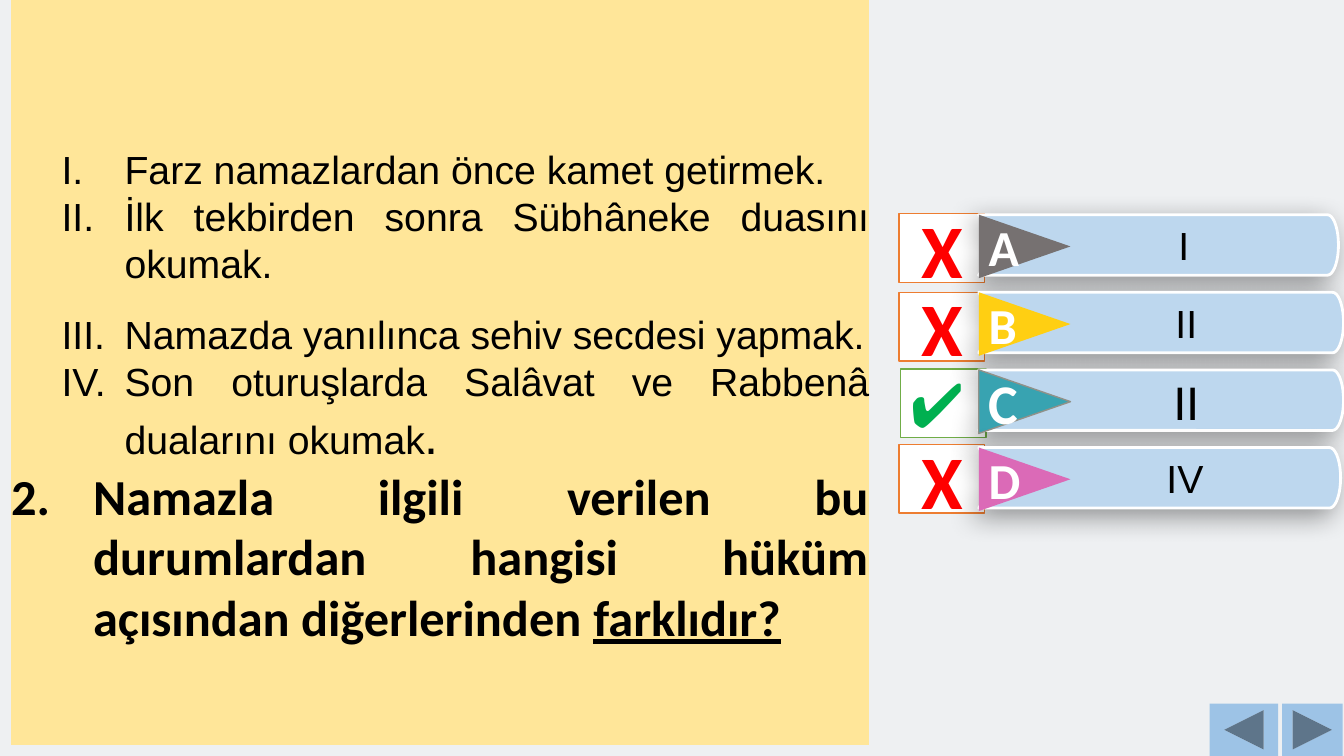
"""Builds a multiple-choice quiz slide with a question panel and four answer flags."""
import math

from lxml import etree
from pptx import Presentation
from pptx import util as u
from pptx.dml.color import RGBColor
from pptx.enum import shapes, text
from pptx.oxml.ns import qn

BACKGROUND = RGBColor(0xEE, 0xF0, 0xF2)
PANEL = RGBColor(0xFF, 0xE6, 0x99)
BUTTON = RGBColor(0x9D, 0xC3, 0xE6)
FLAG = RGBColor(0xBD, 0xD7, 0xEE)
WHITE = RGBColor(0xFF, 0xFF, 0xFF)
BLACK = RGBColor(0x00, 0x00, 0x00)
RED = RGBColor(0xFF, 0x00, 0x00)
GREEN = RGBColor(0x00, 0xB0, 0x50)
RIGHT_EDGE = RGBColor(0x70, 0xAD, 0x47)
WRONG_EDGE = RGBColor(0xED, 0x7D, 0x31)
GREY = RGBColor(0x76, 0x71, 0x71)
YELLOW = RGBColor(0xFF, 0xCF, 0x12)
TEAL = RGBColor(0x38, 0xA3, 0xB1)
TEAL_EDGE = RGBColor(0x90, 0x91, 0x89)
PINK = RGBColor(0xDB, 0x6A, 0xB7)

STATEMENTS = [
    (["Farz namazlardan önce kamet getirmek."], 2.0),
    (["İlk tekbirden sonra Sübhâneke duasını okumak."], 1.0),
    (["Namazda yanılınca sehiv secdesi yapmak."], 1.5),
    (["Son oturuşlarda Salâvat ve Rabbenâ dualarını okumak", ". "], 1.0),
]
QUESTION = ["Namazla ilgili verilen bu durumlardan hangisi hüküm açısından diğerlerinden ",
            "farklıdır?"]

MARKS = [(642.2, 152.6, False), (642.2, 208.8, False),
         (643, 263.5, True), (642.2, 317.5, False)]
ANSWERS = [
    ("A", "I", 257, GREY, None, 36, 28, "Arial"),
    ("B", "II", 260.6, YELLOW, None, 36, 28, "Arial"),
    ("C", "II", 260.6, TEAL, TEAL_EDGE, 40, 36, "Calibri"),
    ("D", "IV", 258.5, PINK, None, 36, 28, "Arial"),
]
FLAG_LEFT, FLAG_TOP, FLAG_STEP, FLAG_HEIGHT = 699.1, 153.4, 55.44, 43.2


class QuizSlide:
    def __init__(self, presentation):
        self.slide = presentation.slides.add_slide(presentation.slide_layouts[1])
        title = self.slide.shapes.title
        title.element.getparent().remove(title.element)
        background = self.slide.background.fill
        background.solid()
        background.fore_color.rgb = BACKGROUND

    def paint(self, shape, fill, edge=None, width=1):
        shape.fill.solid()
        shape.fill.fore_color.rgb = fill
        if edge is None:
            shape.line.fill.background()
        else:
            shape.line.color.rgb = edge
            shape.line.width = u.Pt(width)

    def add_preset(self, owner, kind, box, fill, edge=None):
        shape = owner.add_shape(kind, *map(u.Pt, box))
        shape.shadow.inherit = False
        self.paint(shape, fill, edge)
        return shape

    def format_run(self, run, name, size, color, bold=False):
        run.font.name = name
        run.font.size = u.Pt(size)
        run.font.color.rgb = color
        run.font.bold = bold

    def add_label(self, shape, words, name, size, color, bold=False,
                  align=text.PP_ALIGN.CENTER):
        frame = shape.text_frame
        frame.text = words
        frame.word_wrap = True
        frame.vertical_anchor = text.MSO_ANCHOR.MIDDLE
        paragraph = frame.paragraphs[0]
        paragraph.alignment = align
        self.format_run(paragraph.runs[0], name, size, color, bold)
        return paragraph

    def number(self, paragraph, scheme, margin, indent, font, start=1):
        properties = paragraph._p.get_or_add_pPr()
        properties.set("marL", str(u.Pt(margin)))
        properties.set("indent", str(u.Pt(indent)))
        etree.SubElement(properties, qn("a:buFont"), typeface=font)
        bullet = etree.SubElement(properties, qn("a:buAutoNum"), type=scheme)
        if start > 1:
            bullet.set("startAt", str(start))

    def add_item(self, paragraph, pieces, spacing):
        for piece in pieces:
            paragraph.add_run().text = piece
        paragraph.alignment = text.PP_ALIGN.JUSTIFY
        paragraph.line_spacing = spacing
        paragraph.space_before = paragraph.space_after = u.Pt(0)

    def add_question(self):
        panel = self.slide.placeholders[1]
        panel.left, panel.top, panel.width, panel.height = map(u.Pt, (8, 0, 612.7, 532))
        self.paint(panel, PANEL)
        frame = panel.text_frame
        frame.auto_size = text.MSO_AUTO_SIZE.NONE
        frame.word_wrap = True
        frame.vertical_anchor = text.MSO_ANCHOR.MIDDLE
        frame.margin_left = frame.margin_right = frame.margin_top = frame.margin_bottom = 0
        for index, (pieces, spacing) in enumerate(STATEMENTS):
            paragraph = frame.add_paragraph() if index else frame.paragraphs[0]
            paragraph.level = 1
            self.number(paragraph, "romanUcPeriod", 81, -45, "Arial")
            self.add_item(paragraph, pieces, spacing)
            for run, size in zip(paragraph.runs, (28, 36)):
                self.format_run(run, "Arial", size, BLACK)
        paragraph = frame.add_paragraph()
        self.number(paragraph, "arabicPeriod", 58.5, -58.5, "Calibri", start=2)
        self.add_item(paragraph, QUESTION, 1.0)
        for run in paragraph.runs:
            self.format_run(run, "Calibri", 36, BLACK, True)
        paragraph.runs[-1].font.underline = True

    def add_mark(self, left, top, correct):
        edge = RIGHT_EDGE if correct else WRONG_EDGE
        shape = self.add_preset(self.slide.shapes, shapes.MSO_SHAPE.RECTANGLE,
                                (left, top, 61.2, 49), WHITE, edge)
        if correct:
            self.add_label(shape, "✔", "Calibri", 44, GREEN, align=text.PP_ALIGN.LEFT)
        else:
            self.add_label(shape, "X", "Calibri", 54, RED, True)

    def add_shadow(self, shape):
        effects = etree.SubElement(shape._element.spPr, qn("a:effectLst"))
        shadow = etree.SubElement(effects, qn("a:outerShdw"), blurRad=str(u.Pt(20)),
                                  dist=str(u.Pt(7)), dir=str(135 * 60000),
                                  algn="tr", rotWithShape="0")
        color = etree.SubElement(shadow, qn("a:srgbClr"), val=str(BLACK))
        etree.SubElement(color, qn("a:alpha"), val="40000")

    def add_flag(self, owner, top, width):
        radius, half = 7.9, FLAG_HEIGHT / 2
        center = FLAG_LEFT + width - radius
        angles = [math.radians(degrees) for degrees in range(-90, 91, 10)]
        points = [(center + radius * math.cos(angle), top + half + half * math.sin(angle))
                  for angle in angles]
        points += [(FLAG_LEFT, top + FLAG_HEIGHT), (FLAG_LEFT + 13, top + half)]
        builder = owner.build_freeform(u.Pt(FLAG_LEFT), u.Pt(top))
        builder.add_line_segments([(u.Pt(x), u.Pt(y)) for x, y in points], close=True)
        flag = builder.convert_to_shape()
        self.paint(flag, FLAG, WHITE, 2)
        self.add_shadow(flag)
        return flag

    def add_answer(self, row, letter, words, width, color, edge, letter_size, size, name):
        owner = self.slide.shapes.add_group_shape().shapes
        top = FLAG_TOP + row * FLAG_STEP
        paragraph = self.add_label(self.add_flag(owner, top, width), words, name, size, BLACK)
        paragraph.level = 1
        paragraph._p.get_or_add_pPr().set("marL", str(u.Pt(36)))
        pointer = self.add_preset(owner, shapes.MSO_SHAPE.ISOSCELES_TRIANGLE,
                                  (709.2, top - 10.1, 45.4, 65.5), color, edge)
        pointer.rotation = 90
        self.add_label(pointer, letter, "Calibri", letter_size, WHITE, True)
        pointer.text_frame._txBody.bodyPr.set("vert", "vert270")

    def add_button(self, kind, left, width):
        self.add_preset(self.slide.shapes, kind, (left, 502.6, width, 37.4), BUTTON)


def main():
    presentation = Presentation()
    presentation.slide_width, presentation.slide_height = u.Pt(960), u.Pt(540)
    quiz = QuizSlide(presentation)
    quiz.add_button(shapes.MSO_SHAPE.ACTION_BUTTON_BACK_OR_PREVIOUS, 864, 49)
    quiz.add_button(shapes.MSO_SHAPE.ACTION_BUTTON_FORWARD_OR_NEXT, 915.8, 43.2)
    quiz.add_question()
    for mark in MARKS:
        quiz.add_mark(*mark)
    for row, answer in enumerate(ANSWERS):
        quiz.add_answer(row, *answer)
    presentation.save("out.pptx")


if __name__ == "__main__":
    main()
